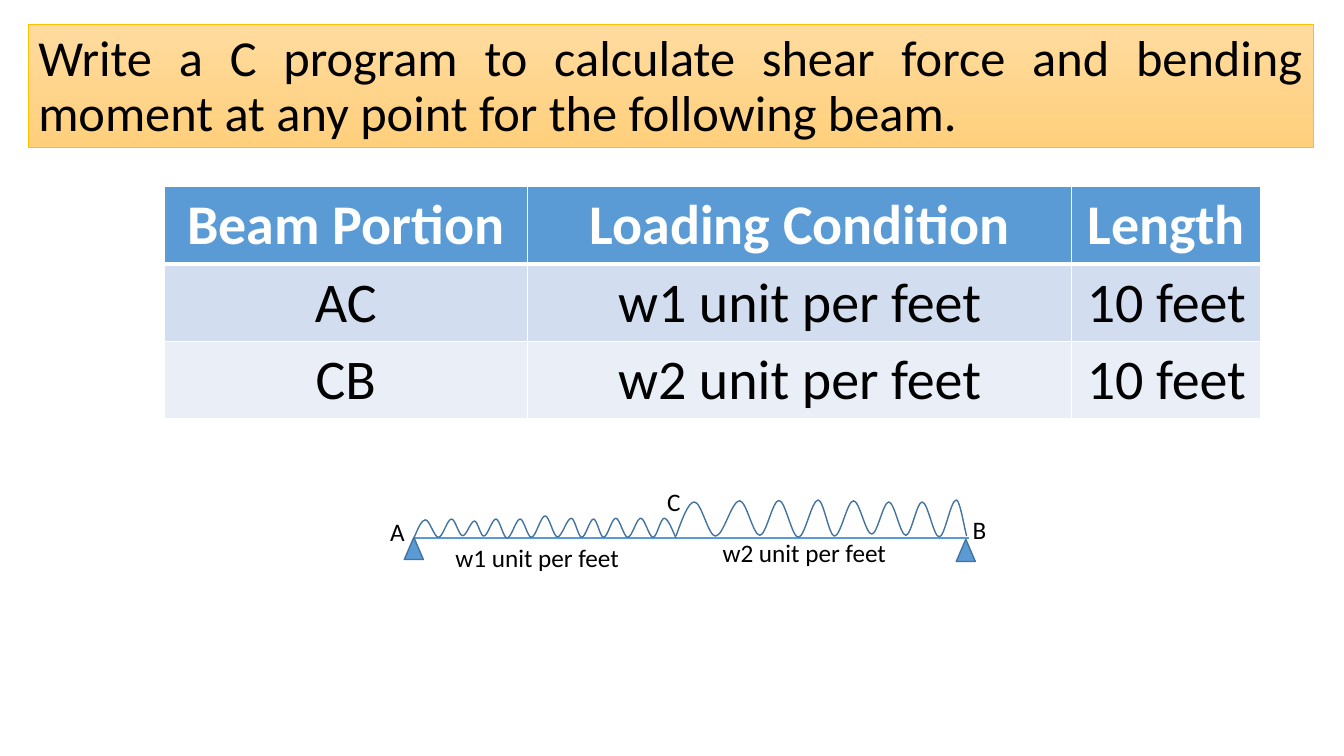
from lxml.etree import SubElement
from pptx import Presentation
from pptx.dml.color import RGBColor
from pptx.enum.shapes import MSO_CONNECTOR, MSO_SHAPE
from pptx.enum.text import MSO_ANCHOR, MSO_AUTO_SIZE, PP_ALIGN
from pptx.oxml import parse_xml
from pptx.oxml.ns import nsdecls, qn
from pptx.util import Cm, Pt

BLACK = RGBColor(0x00, 0x00, 0x00)
WHITE = RGBColor(0xFF, 0xFF, 0xFF)
BLUE = RGBColor(0x5B, 0x9B, 0xD5)
DARK_BLUE = RGBColor(0x43, 0x73, 0x9E)
BAND = RGBColor(0xD2, 0xDE, 0xEF)
PALE_BAND = RGBColor(0xEA, 0xEF, 0xF7)
GOLD = RGBColor(0xFF, 0xC0, 0x00)
PEACH = RGBColor(0xFF, 0xDB, 0x9E)
APRICOT = RGBColor(0xFF, 0xD0, 0x7C)


def add_span(para, text, size, color=BLACK, bold=False):
    span = para.add_run()
    span.text = text
    span.font.name = "Calibri"
    span.font.size = Pt(size)
    span.font.bold = bold
    span.font.color.rgb = color


def bend_segments(wave):
    """Turn the straight segments of a freeform into curves that are level at each turn."""
    outline = wave._element.find(".//" + qn("a:path"))
    corners = [(int(point.get("x")), int(point.get("y"))) for point in outline.iter(qn("a:pt"))]
    segments = outline.findall(qn("a:lnTo"))
    for index, segment in enumerate(segments):
        (x_start, y_start), (x_end, y_end) = corners[index:index + 2]
        width, rise = x_end - x_start, y_end - y_start
        lift = 0.5 if index == 0 else 0
        drop = 0.4 if index == len(segments) - 1 else 0
        curve = SubElement(outline, qn("a:cubicBezTo"))
        for x, y in ((x_start + width / 3, y_start + rise * lift),
                     (x_end - width / 3, y_end - rise * drop),
                     (x_end, y_end)):
            SubElement(curve, qn("a:pt"), x=str(round(x)), y=str(round(y)))
        outline.replace(segment, curve)


deck = Presentation()
deck.slide_width, deck.slide_height = Cm(33.87), Cm(19.05)
page = deck.slides.add_slide(deck.slide_layouts[5])

# Task
title = page.shapes.title
title.left, title.top, title.width, title.height = Cm(0.71), Cm(0.61), Cm(32.39), Cm(3.1)
title.fill.gradient()
title.fill.gradient_angle = 270
for position, (stop, color) in enumerate(zip(title.fill.gradient_stops, (PEACH, APRICOT))):
    stop.color.rgb = color
    stop.position = position
title.line.color.rgb = GOLD
title.line.width = Pt(0.5)
frame = title.text_frame
frame.auto_size = MSO_AUTO_SIZE.NONE
frame.vertical_anchor = MSO_ANCHOR.BOTTOM
para = frame.paragraphs[0]
para.alignment = PP_ALIGN.JUSTIFY
para.line_spacing = 0.9
add_span(para, "Write a C program to calculate shear force and bending moment "
               "at any point for the following beam.", 36)

# Beam
beam = page.shapes.add_group_shape()
axis = beam.shapes.add_connector(
    MSO_CONNECTOR.STRAIGHT, Cm(10.44), Cm(13.56), Cm(24.41), Cm(13.56))
axis.line.color.rgb = BLUE
axis.line.width = Pt(1.25)
SubElement(axis._element.spPr, qn("a:effectLst"))

# Loads: alternating troughs and crests
loads = [
    [(10.44, 13.54), (10.72, 13.1), (11.05, 13.54), (11.38, 13.08), (11.66, 13.5),
     (11.96, 13.13), (12.19, 13.51), (12.5, 13.08), (12.78, 13.56), (13.11, 13.08),
     (13.39, 13.54), (13.74, 13.0), (14.05, 13.53), (14.4, 13.06), (14.66, 13.54),
     (14.96, 13.08), (15.21, 13.54), (15.52, 13.06), (15.82, 13.54), (16.15, 13.06),
     (16.46, 13.54), (16.74, 13.06), (17.04, 13.56)],
    [(17.04, 13.5), (17.5, 12.65), (18.03, 13.51), (18.64, 12.62), (19.15, 13.49),
     (19.63, 12.61), (20.12, 13.54), (20.62, 12.6), (21.03, 13.51), (21.51, 12.62),
     (21.97, 13.46), (22.4, 12.65), (22.83, 13.49), (23.24, 12.65), (23.67, 13.53),
     (24.1, 12.6), (24.36, 13.51)],
]
for turns in loads:
    start, *rest = [(Cm(x), Cm(y)) for x, y in turns]
    builder = beam.shapes.build_freeform(*start)
    builder.add_line_segments(rest, close=False)
    wave = builder.convert_to_shape()
    bend_segments(wave)
    wave.shadow.inherit = False
    wave.fill.background()
    wave.line.color.rgb = DARK_BLUE
    wave.line.width = Pt(1)

for left, top in ((24.1, 13.59), (10.19, 13.54)):
    support = beam.shapes.add_shape(
        MSO_SHAPE.ISOSCELES_TRIANGLE, Cm(left), Cm(top), Cm(0.48), Cm(0.56))
    support.shadow.inherit = False
    support.fill.solid()
    support.fill.fore_color.rgb = BLUE
    support.line.color.rgb = DARK_BLUE
    support.line.width = Pt(1)

labels = [
    ("w1 unit per feet", 11.23, 13.54, 5.23),
    ("w2 unit per feet", 17.96, 13.41, 4.98),
    ("A", 9.58, 12.88, 1.09),
    ("C", 16.56, 12.12, 1.09),
    ("B", 24.26, 12.83, 1.09),
]
for text, left, top, width in labels:
    box = page.shapes.add_textbox(Cm(left), Cm(top), Cm(width), Cm(1.02))
    box.text_frame.word_wrap = True
    add_span(box.text_frame.paragraphs[0], text, 18)

# Loading table
rows = [
    ("Beam Portion", "Loading Condition", "Length"),
    ("AC", "w1 unit per feet", "10 feet"),
    ("CB", "w2 unit per feet", "10 feet"),
]
table = page.shapes.add_table(3, 3, Cm(4.14), Cm(4.7), Cm(27.64), Cm(5.82)).table
for column, width in zip(table.columns, (9.15, 13.72, 4.77)):
    column.width = Cm(width)
for row_index, (row, fill) in enumerate(zip(rows, (BLUE, BAND, PALE_BAND))):
    table.rows[row_index].height = Cm(1.94)
    header = row_index == 0
    borders = {"lnL": 1, "lnR": 1, "lnT": 1, "lnB": 3 if header else 1}
    for column_index, text in enumerate(row):
        cell = table.cell(row_index, column_index)
        cell.fill.solid()
        cell.fill.fore_color.rgb = fill
        para = cell.text_frame.paragraphs[0]
        para.alignment = PP_ALIGN.CENTER
        add_span(para, text, 40, WHITE if header else BLACK, header)
        for position, (side, points) in enumerate(borders.items()):
            border = parse_xml(
                f'<a:{side} {nsdecls("a")} w="{Pt(points)}"><a:solidFill>'
                f'<a:srgbClr val="{WHITE}"/></a:solidFill></a:{side}>')
            cell._tc.get_or_add_tcPr().insert(position, border)

deck.save("out.pptx")
